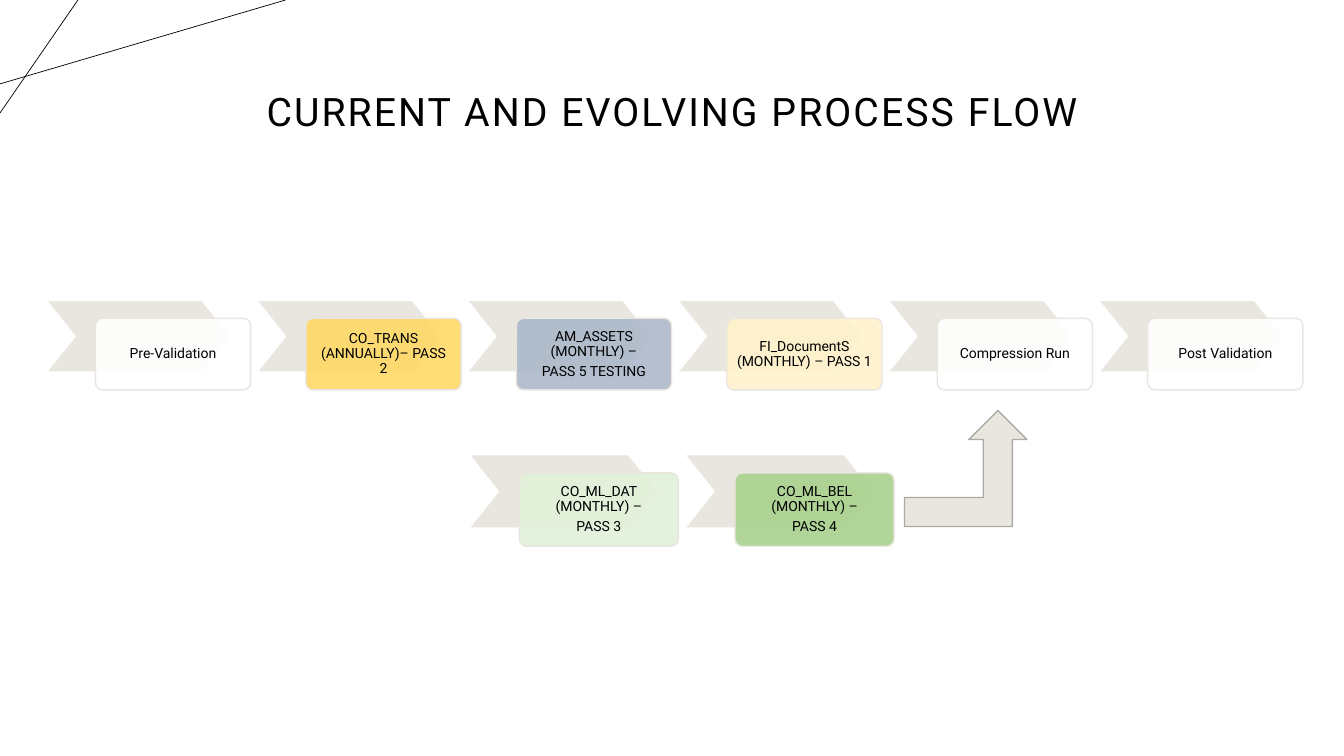
from lxml import etree
from pptx import Presentation
from pptx.dml.color import RGBColor
from pptx.enum.shapes import MSO_CONNECTOR, MSO_SHAPE
from pptx.enum.text import MSO_ANCHOR, PP_ALIGN
from pptx.oxml.ns import qn
from pptx.util import Inches, Pt

STRAIGHT = MSO_CONNECTOR.STRAIGHT
CHEVRON = MSO_SHAPE.CHEVRON
ROUNDED = MSO_SHAPE.ROUNDED_RECTANGLE
BENT_ARROW = MSO_SHAPE.BENT_UP_ARROW
CENTER = PP_ALIGN.CENTER
MIDDLE = MSO_ANCHOR.MIDDLE

MAIN_STEPS = [
    (["Pre-Validation"], "FFFFFF"),
    (["CO_TRANS (ANNUALLY)– PASS 2"], "FFD966"),
    (["AM_ASSETS (MONTHLY) –", "PASS 5 TESTING"], "ADB9CA"),
    (["FI_DocumentS (MONTHLY) – PASS 1"], "FFF2CC"),
    (["Compression Run"], "FFFFFF"),
    (["Post Validation"], "FFFFFF"),
]
LEDGER_STEPS = [
    (["CO_ML_DAT (MONTHLY) –", "PASS 3"], "E2F0D9"),
    (["CO_ML_BEL (MONTHLY) –", "PASS 4"], "A9D18E"),
]


def color(value):
    return RGBColor.from_string(value)


class FlowPage:
    """Draws on one slide with a grid of 100 columns by 100 rows."""

    font = "Roboto"
    ink = "000000"
    sand = "E9E6DF"
    edge = "ACAAA5"
    white = "FFFFFF"

    def __init__(self, deck):
        self.column = deck.slide_width / 100
        self.row = deck.slide_height / 100
        self.page = deck.slides.add_slide(deck.slide_layouts[6])

    def place(self, *lengths):
        units = (self.column, self.row) * 2
        return [round(length * unit) for length, unit in zip(lengths, units)]

    def line(self, *ends):
        line = self.page.shapes.add_connector(STRAIGHT, *self.place(*ends))
        line.line.color.rgb = color(self.ink)
        line.line.width = Pt(0.5)
        etree.SubElement(line._element.spPr, qn("a:effectLst"))

    def shape(self, kind, area, fill, edge, adjustment=None, opacity=100):
        shape = self.page.shapes.add_shape(kind, *self.place(*area))
        shape.shadow.inherit = False
        shape.fill.solid()
        shape.fill.fore_color.rgb = color(fill)
        shape.line.color.rgb = color(edge)
        shape.line.width = Pt(1)
        if adjustment is not None:
            shape.adjustments[0] = adjustment
        if opacity < 100:
            solid = shape._element.spPr.find(qn("a:solidFill"))
            alpha = etree.SubElement(solid[0], qn("a:alpha"))
            alpha.set("val", str(opacity * 1000))
        return shape

    def label(self, frame, lines, size, gap=0):
        frame.word_wrap = True
        frame.vertical_anchor = MIDDLE
        for index, text in enumerate(lines):
            para = frame.add_paragraph() if index else frame.paragraphs[0]
            para.text = text
            para.alignment = CENTER
            para.line_spacing = 0.9
            para.space_after = Pt(gap)
            para.font.name = self.font
            para.font.size = Pt(size)
            para.font.color.rgb = color(self.ink)

    def title(self, text, area):
        box = self.page.shapes.add_textbox(*self.place(*area))
        self.label(box.text_frame, [text], 28)
        span = box.text_frame.paragraphs[0].runs[0]
        span.font._element.set("spc", "150")

    def step(self, left, top, pitch, lines, fill):
        height = 0.605 * pitch
        self.shape(CHEVRON, (left, top, 0.876 * pitch, height), self.sand, self.white, 0.4)
        area = (left + 0.233 * pitch, top + 0.15 * pitch, 0.7375 * pitch, height)
        frame = self.shape(ROUNDED, area, fill, self.sand, 0.1, 90).text_frame
        frame.margin_left = frame.margin_right = Pt(5.5)
        frame.margin_top = frame.margin_bottom = Pt(5.5)
        self.label(frame, lines, 10, 3.5)

    def flow(self, left, top, pitch, steps):
        for index, (lines, fill) in enumerate(steps):
            self.step(left + index * pitch, top, pitch, lines, fill)

    def arrow(self, area):
        self.shape(BENT_ARROW, area, self.sand, self.edge)


def main():
    deck = Presentation()
    deck.slide_width = Inches(13.33)
    deck.slide_height = Inches(7.5)
    page = FlowPage(deck)
    page.line(0, 11.1, 21.25, 0)
    page.line(5.8, 0, 0, 14.95)
    page.flow(3.45, 39.75, 15.66, MAIN_STEPS)
    page.title("CURRENT AND EVOLVING PROCESS FLOW", (6.9, 5.33, 86.25, 19.33))
    page.flow(34.9, 60.15, 16.05, LEDGER_STEPS)
    page.arrow((67.3, 54.3, 9.1, 15.35))
    deck.save("out.pptx")


if __name__ == "__main__":
    main()
